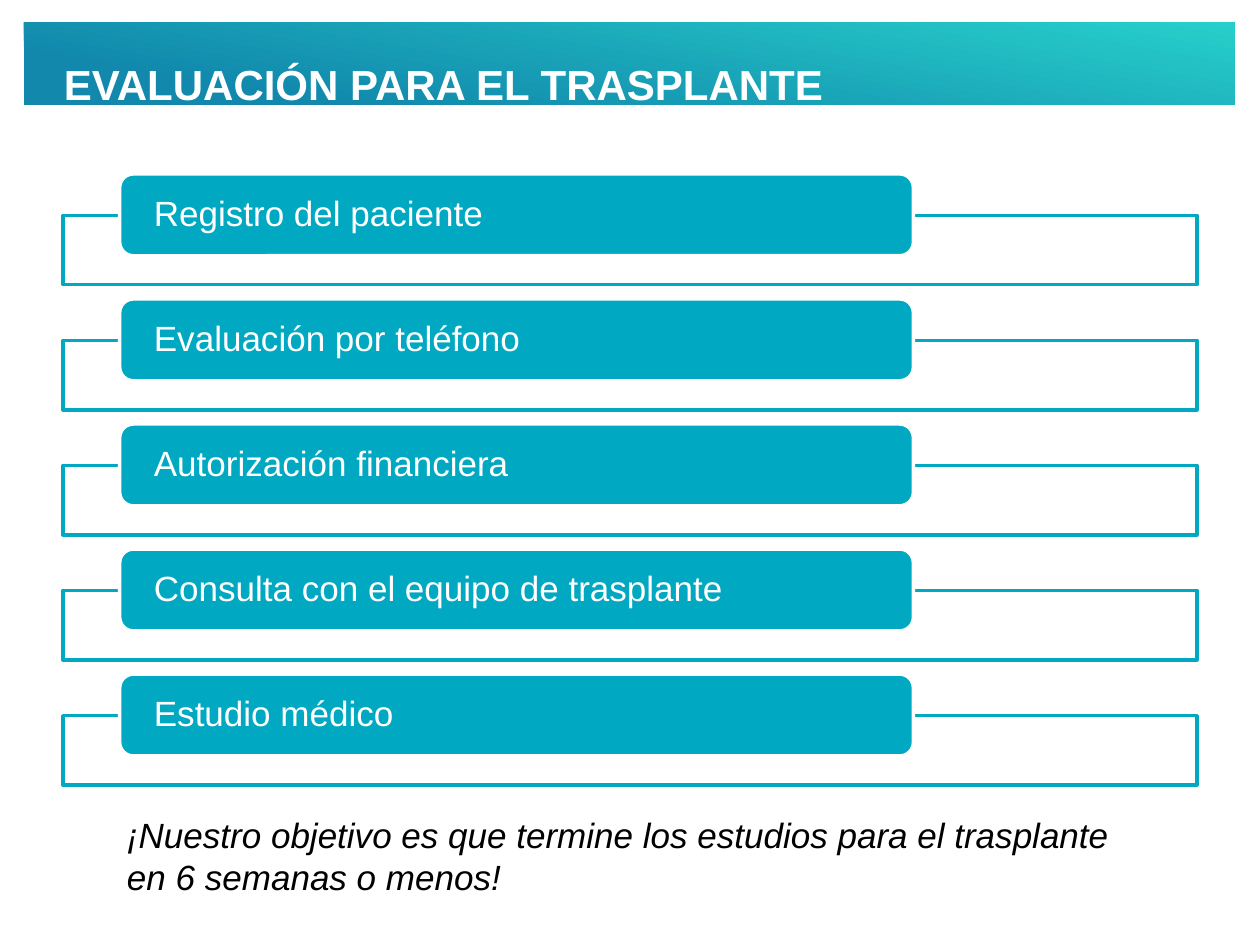
from lxml import etree
from pptx import Presentation
from pptx.dml.color import RGBColor
from pptx.enum.shapes import MSO_SHAPE
from pptx.enum.text import MSO_ANCHOR, MSO_AUTO_SIZE, PP_ALIGN
from pptx.oxml.ns import qn
from pptx.util import Inches, Pt

RECTANGLE = MSO_SHAPE.RECTANGLE
ROUNDED = MSO_SHAPE.ROUNDED_RECTANGLE
MIDDLE = MSO_ANCHOR.MIDDLE
LEFT = PP_ALIGN.LEFT
GROW = MSO_AUTO_SIZE.SHAPE_TO_FIT_TEXT

FONT = "Arial"
TEAL = "00A8C1"
WHITE = "FFFFFF"
BLACK = "000000"

STEPS = [
    "Registro del paciente",
    "Evaluación por teléfono",
    "Autorización financiera",
    "Consulta con el equipo de trasplante",
    "Estudio médico",
]
FIRST_TOP, LAST_TOP = 1.38, 5.35
PITCH = (LAST_TOP - FIRST_TOP) / (len(STEPS) - 1)
FRAME_OFFSET = 0.33


def color(value):
    return RGBColor.from_string(value)


def add_box(shapes, kind, left, top, width, height):
    shape = shapes.add_shape(
        kind, Inches(left), Inches(top), Inches(width), Inches(height))
    shape.shadow.inherit = False
    return shape


def fill_and_outline(shape, fill, line):
    shape.fill.solid()
    shape.fill.fore_color.rgb = color(fill)
    shape.line.color.rgb = color(line)
    shape.line.width = Pt(2)


def write(text_frame, text, size, text_color):
    text_frame.word_wrap = True
    paragraph = text_frame.paragraphs[0]
    paragraph.text = text
    paragraph.alignment = LEFT
    paragraph.font.name = FONT
    paragraph.font.size = Pt(size)
    paragraph.font.color.rgb = color(text_color)
    return paragraph


def add_text(shapes, left, top, width, height, text, size, text_color):
    box = shapes.add_textbox(
        Inches(left), Inches(top), Inches(width), Inches(height))
    box.text_frame.auto_size = GROW
    return write(box.text_frame, text, size, text_color)


def add_banner(shapes):
    banner = add_box(shapes, RECTANGLE, 0.19, 0.18, 9.61, 0.65)
    banner.line.fill.background()
    banner.fill.gradient()
    banner.fill.gradient_angle = 80
    stops = [(0.17, "1188AC"), (1, "27CFCA")]
    for stop, (position, value) in zip(banner.fill.gradient_stops, stops):
        stop.position = position
        stop.color.rgb = color(value)


def add_step(shapes, top, text):
    """Add an open frame with a rounded label over its upper edge."""
    group = shapes.add_group_shape()
    frame = add_box(group.shapes, RECTANGLE, 0.5, top + FRAME_OFFSET, 9, 0.55)
    fill_and_outline(frame, WHITE, TEAL)
    fill_color = frame._element.spPr.find(qn("a:solidFill"))[0]
    etree.SubElement(fill_color, qn("a:alpha"), val="90000")

    label = add_box(group.shapes, ROUNDED, 0.95, top, 6.3, 0.65)
    fill_and_outline(label, TEAL, WHITE)
    text_frame = label.text_frame
    text_frame.vertical_anchor = MIDDLE
    text_frame.margin_left = text_frame.margin_right = Inches(0.24)
    text_frame.margin_top = text_frame.margin_bottom = 0
    write(text_frame, text, 20, WHITE).line_spacing = 0.9


def main():
    presentation = Presentation()
    presentation.slide_width = Inches(10)
    presentation.slide_height = Inches(7.5)
    slide = presentation.slides.add_slide(presentation.slide_layouts[6])
    shapes = slide.shapes

    add_banner(shapes)
    title = add_text(shapes, 0.41, 0.11, 8.53, 0.71,
                     "EVALUACIÓN PARA EL TRASPLANTE", 24, WHITE)
    title.font.bold = True
    title.line_spacing = Pt(50.6)

    for index, step in enumerate(STEPS):
        add_step(shapes, FIRST_TOP + index * PITCH, step)

    goal = add_text(shapes, 0.91, 6.41, 8.17, 0.44,
                    "¡Nuestro objetivo es que termine los estudios para el "
                    "trasplante en 6 semanas o menos!", 20, BLACK)
    goal.font.italic = True

    presentation.save("out.pptx")


if __name__ == "__main__":
    main()
